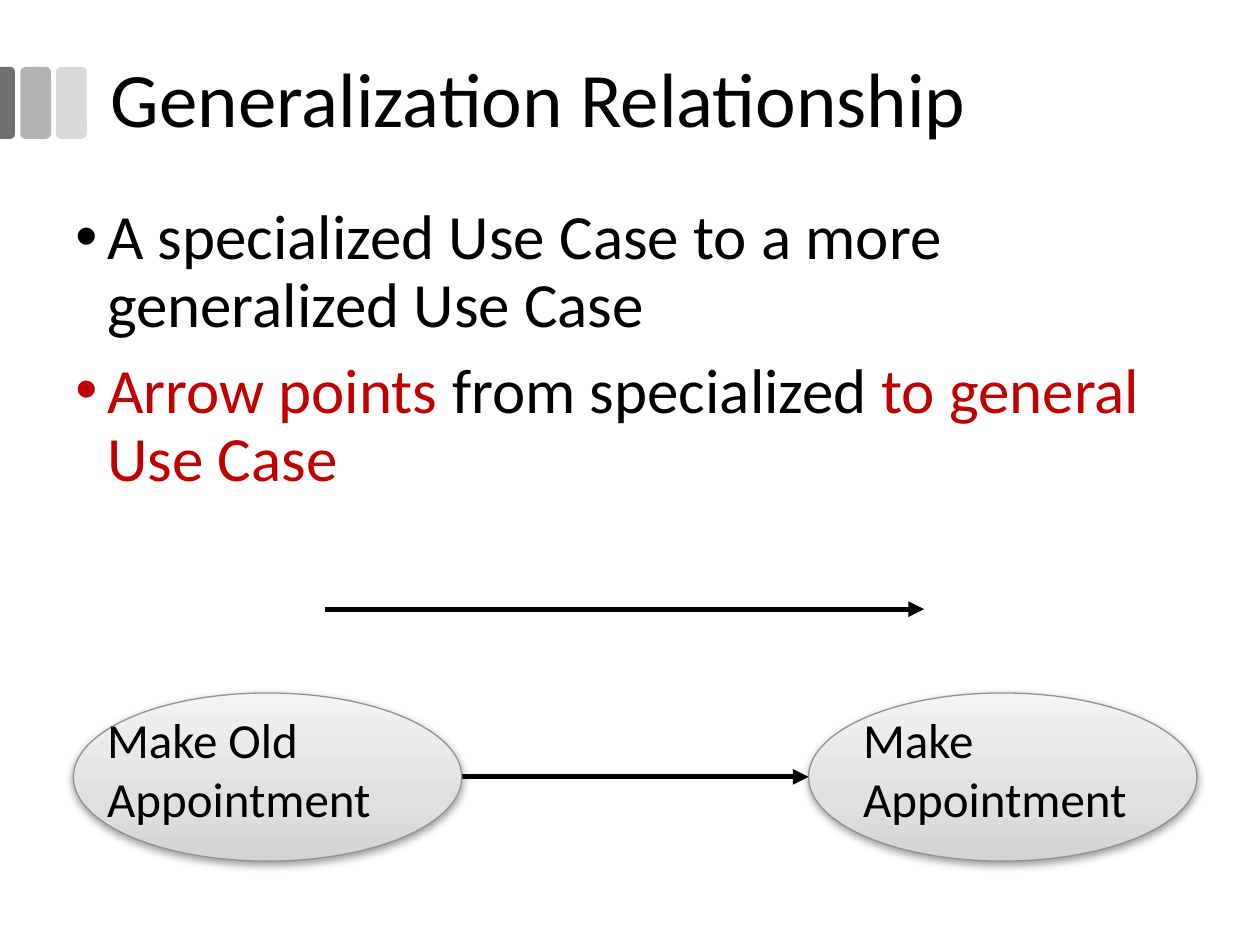
from dataclasses import dataclass

from lxml import etree
from pptx import Presentation
from pptx.dml.color import RGBColor
from pptx.enum.shapes import MSO_CONNECTOR as Link, MSO_SHAPE as Kind
from pptx.enum.text import MSO_ANCHOR as Anchor, PP_ALIGN as Align
from pptx.oxml import parse_xml
from pptx.oxml.ns import nsdecls, qn
from pptx.util import Cm, Pt


@dataclass(frozen=True)
class Theme:
    font: str = "Calibri"
    ink: str = "000000"
    red: str = "C00000"
    edge: str = "939393"
    bars: tuple = ("D9D9D9", "B3B3B3", "707070")
    shade: tuple = ((0, "D3D3D3"), (35, "E0E0E0"), (100, "F3F3F3"))
    title: int = 44
    body: int = 36
    label: int = 28


THEME = Theme()


def box(*sizes):
    return [Cm(size) for size in sizes]


def add_run(para, text, size, color=THEME.ink):
    run = para.add_run()
    run.text = text
    run.font.name = THEME.font
    run.font.size = Pt(size)
    run.font.color.rgb = RGBColor.from_string(color)


def add_bar(slide, kind, color, *place):
    bar = slide.shapes.add_shape(kind, *box(*place))
    bar.shadow.inherit = False
    bar.fill.solid()
    bar.fill.fore_color.rgb = RGBColor.from_string(color)
    bar.line.fill.background()
    return bar


def add_bars(slide):
    light, mid, dark = THEME.bars
    add_bar(slide, Kind.ROUNDED_RECTANGLE, light, 1.13, 1.35, 0.62, 1.45)
    add_bar(slide, Kind.ROUNDED_RECTANGLE, mid, 0.41, 1.35, 0.62, 1.45)
    bar = add_bar(slide, Kind.ROUND_2_SAME_RECTANGLE, dark,
                  -0.58, 1.92, 1.45, 0.31)
    bar.rotation = 90
    bar.adjustments[0] = 0.29


def set_title(slide, text):
    title = slide.shapes.title
    title.left, title.top, title.width, title.height = box(1.98, 1.02, 22.78, 2.1)
    frame = title.text_frame
    frame.vertical_anchor = Anchor.MIDDLE
    para = frame.paragraphs[0]
    para.alignment = Align.LEFT
    para.line_spacing = 0.9
    add_run(para, text, THEME.title)


def add_text(slide, *place):
    frame = slide.shapes.add_textbox(*box(*place)).text_frame
    frame.word_wrap = True
    return frame


def add_bullets(slide, items):
    frame = add_text(slide, 1.27, 4.01, 22.86, 13.11)
    for i, runs in enumerate(items):
        para = frame.add_paragraph() if i else frame.paragraphs[0]
        props = para._p.get_or_add_pPr()
        props.set("marL", str(Cm(0.64)))
        props.set("indent", str(Cm(-0.64)))
        etree.SubElement(props, qn("a:buFont")).set("typeface", "Arial")
        etree.SubElement(props, qn("a:buChar")).set("char", "•")
        para.line_spacing = 0.9
        para.space_before = Pt(10 if i else 0)
        for text, color in runs:
            add_run(para, text, THEME.body, color)


def add_arrow(slide, tip, end, y):
    line = slide.shapes.add_connector(Link.STRAIGHT, *box(tip, y, end, y))
    line.line.width = Pt(3)
    line.line.color.rgb = RGBColor.from_string(THEME.ink)
    props = line._element.spPr
    head = etree.SubElement(props.find(qn("a:ln")), qn("a:headEnd"))
    head.set("type", "triangle")
    etree.SubElement(props, qn("a:effectLst"))


def add_oval(slide, left):
    """Draw a use case ellipse with a gradient and a soft shadow."""
    oval = slide.shapes.add_shape(Kind.OVAL, *box(left, 13.97, 7.83, 3.39))
    oval.line.color.rgb = RGBColor.from_string(THEME.edge)
    oval.line.width = Pt(0.75)
    stops = "".join(
        f'<a:gs pos="{pos * 1000}"><a:srgbClr val="{color}"/></a:gs>'
        for pos, color in THEME.shade)
    props = oval._element.spPr
    props.find(qn("a:ln")).addprevious(parse_xml(
        f'<a:gradFill {nsdecls("a")} rotWithShape="1"><a:gsLst>{stops}</a:gsLst>'
        '<a:lin ang="16200000" scaled="0"/></a:gradFill>'))
    props.append(parse_xml(
        f'<a:effectLst {nsdecls("a")}><a:outerShdw blurRad="{Pt(5)}" '
        f'dist="{Pt(1.6)}" dir="5400000" rotWithShape="0">'
        f'<a:srgbClr val="{THEME.ink}"><a:alpha val="38000"/></a:srgbClr>'
        '</a:outerShdw></a:effectLst>'))


def add_label(slide, left, width, first, last):
    para = add_text(slide, left, 14.18, width, 2.65).paragraphs[0]
    add_run(para, first, THEME.label)
    para.add_line_break()
    add_run(para, last, THEME.label)


def main():
    deck = Presentation()
    deck.slide_width, deck.slide_height = box(25.4, 19.05)
    slide = deck.slides.add_slide(deck.slide_layouts[5])
    add_bars(slide)
    set_title(slide, "Generalization Relationship")
    add_bullets(slide, [
        [("A specialized Use Case to a more generalized Use Case", THEME.ink)],
        [("Arrow points ", THEME.red), ("from specialized ", THEME.ink),
         ("to general Use Case", THEME.red)],
    ])
    add_arrow(slide, 18.63, 6.56, 12.28)
    add_oval(slide, 16.3)
    add_arrow(slide, 16.3, 9.31, 15.66)
    add_label(slide, 17.15, 6.56, "Make", "Appointment")
    add_oval(slide, 1.48)
    add_label(slide, 1.91, 7.41, "Make Old", "Appointment")
    deck.save("out.pptx")


if __name__ == "__main__":
    main()
